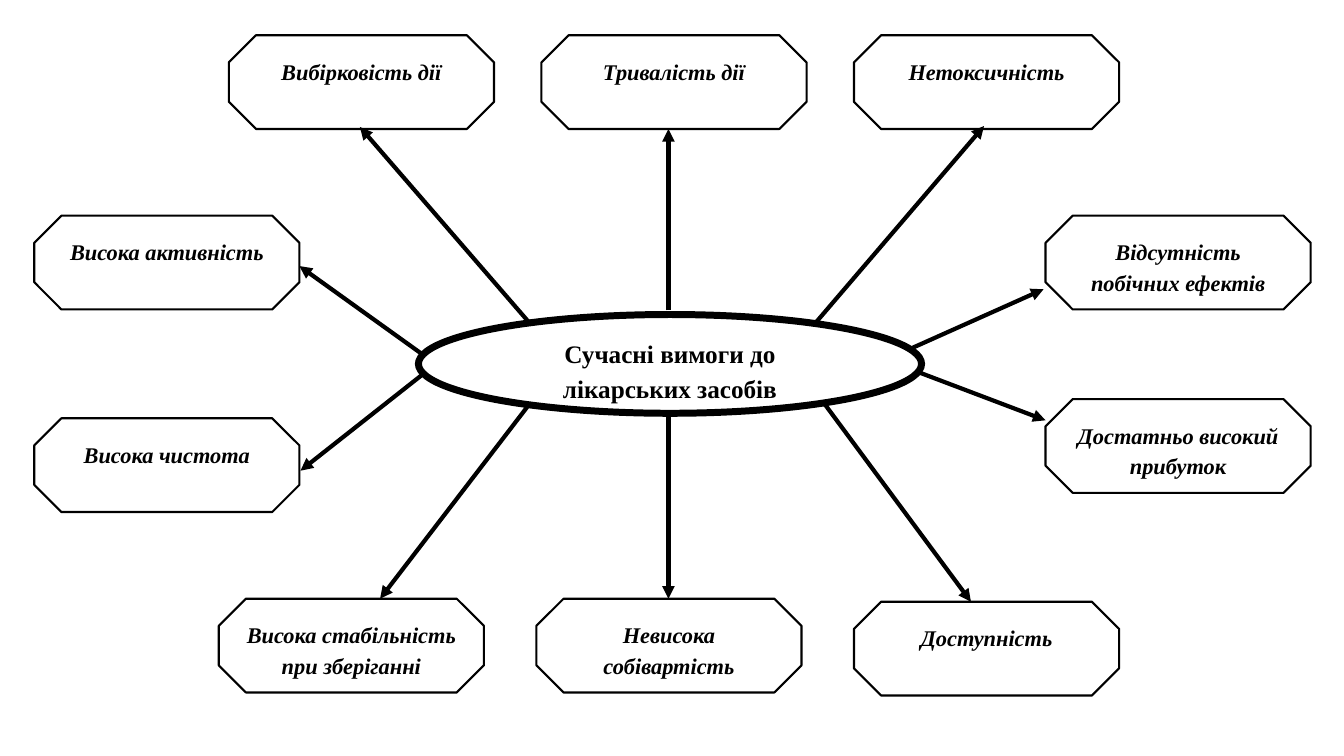
"""Builds a radial diagram of the modern requirements for medicines."""
from lxml import etree
from pptx import Presentation
from pptx.dml.color import RGBColor
from pptx.enum.shapes import MSO_CONNECTOR, MSO_SHAPE
from pptx.enum.text import MSO_ANCHOR, PP_ALIGN
from pptx.oxml.ns import qn
from pptx.util import Inches, Pt

STRAIGHT = MSO_CONNECTOR.STRAIGHT
OCTAGON, OVAL = MSO_SHAPE.OCTAGON, MSO_SHAPE.OVAL
TOP, CENTER = MSO_ANCHOR.TOP, PP_ALIGN.CENTER

COLORS = {"ink": "000000", "paper": "FFFFFF"}
FONT = "Times New Roman"
BOX_SIZE = (2.63, 0.93)
LEFT_SIDE, RIGHT_SIDE = 0.34, 10.37
TOP_ROW, BOTTOM_ROW = 0.35, 5.94

TOPIC = ("Сучасні вимоги до лікарських засобів", (4.15, 3.12, 4.99, 0.98))

# label, box corner, arrow start, arrow end
REQUIREMENTS = [
    ("Вибірковість дії", (2.27, TOP_ROW), (5.24, 3.19), (3.57, 1.26)),
    ("Тривалість дії", (5.37, TOP_ROW), (6.63, 3.08), (6.63, 1.28)),
    ("Нетоксичність", (8.47, TOP_ROW), (8.1, 3.19), (9.76, 1.25)),
    ("Відсутність побічних ефектів", (RIGHT_SIDE, 2.14), (9.03, 3.46), (10.35, 2.87)),
    ("Достатньо високий прибуток", (RIGHT_SIDE, 3.96), (9.13, 3.7), (10.37, 4.17)),
    ("Доступність", (8.47, 5.97), (8.18, 4.01), (9.63, 5.97)),
    ("Невисока собівартість", (5.32, BOTTOM_ROW), (6.63, 4.12), (6.63, 5.94)),
    ("Висока стабільність при зберіганні", (2.17, BOTTOM_ROW), (5.25, 4.01), (3.77, 5.94)),
    ("Висока чистота", (LEFT_SIDE, 4.15), (4.21, 3.7), (2.98, 4.67)),
    ("Висока активність", (LEFT_SIDE, 2.14), (4.21, 3.53), (2.97, 2.64)),
]


def color(name):
    return RGBColor.from_string(COLORS[name])


def add_node(slide, kind, label, bounds, border, size, italic):
    node = slide.shapes.add_shape(kind, *map(Inches, bounds))
    node.shadow.inherit = False
    node.fill.solid()
    node.fill.fore_color.rgb = color("paper")
    node.line.color.rgb = color("ink")
    node.line.width = Pt(border)
    frame = node.text_frame
    frame.word_wrap = True
    frame.vertical_anchor = TOP
    paragraph = frame.paragraphs[0]
    paragraph.alignment = CENTER
    paragraph.line_spacing = 1.15
    paragraph.space_after = Pt(10)
    run = paragraph.add_run()
    run.text = label
    run.font.name = FONT
    run.font.size = Pt(size)
    run.font.bold = True
    run.font.italic = italic
    run.font.color.rgb = color("ink")
    return node


def add_arrow(slide, start, end):
    arrow = slide.shapes.add_connector(STRAIGHT, *map(Inches, start + end))
    arrow.line.color.rgb = color("ink")
    arrow.line.width = Pt(3)
    etree.SubElement(arrow.line._get_or_add_ln(), qn("a:tailEnd"), type="triangle")
    etree.SubElement(arrow._element.spPr, qn("a:effectLst"))


def main():
    deck = Presentation()
    deck.slide_width, deck.slide_height = Inches(13.33), Inches(7.5)
    slide = deck.slides.add_slide(deck.slide_layouts[6])
    topic, topic_bounds = TOPIC
    add_node(slide, OVAL, topic, topic_bounds, 5, 18, False)
    for requirement, corner, start, end in REQUIREMENTS:
        box = add_node(slide, OCTAGON, requirement, corner + BOX_SIZE, 1.5, 16, True)
        box.adjustments[0] = 0.29
        add_arrow(slide, start, end)
    deck.save("out.pptx")


if __name__ == "__main__":
    main()
